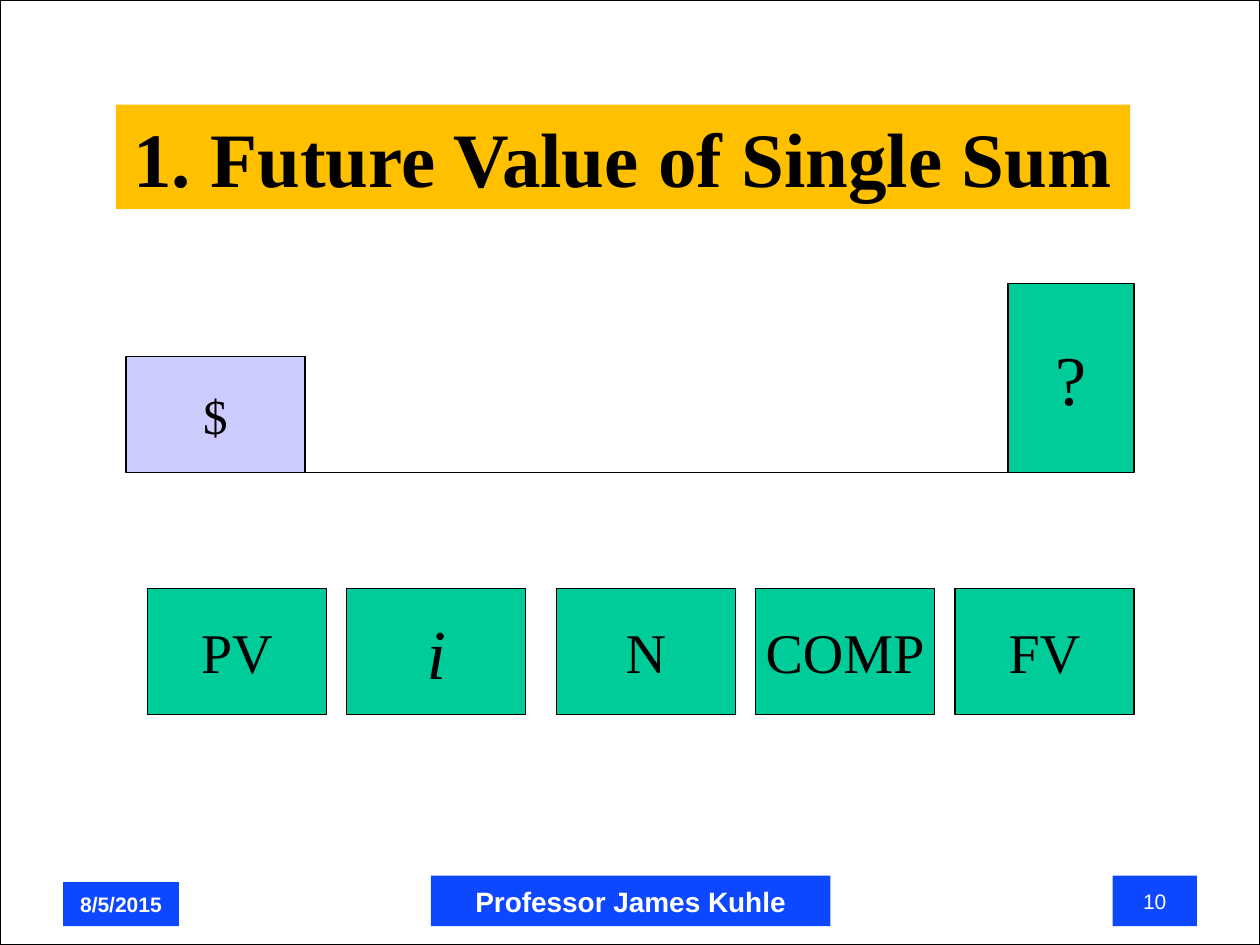
from pptx import Presentation
from pptx.dml.color import RGBColor
from pptx.enum.shapes import MSO_CONNECTOR, MSO_SHAPE
from pptx.enum.text import MSO_ANCHOR, PP_ALIGN
from pptx.oxml.ns import qn
from pptx.util import Inches, Pt
from lxml import etree

SERIF, SANS = "Times New Roman", "Arial"
BLACK, WHITE = "000000", "FFFFFF"
GREEN, LILAC, GOLD, BLUE = "00CC99", "CCCCFF", "FFC000", "0D47FF"


def rgb(value):
    return RGBColor.from_string(value)


def add_box(s, box, fill, line=None, kind=MSO_SHAPE.RECTANGLE):
    sp = s.shapes.add_shape(kind, *[Inches(v) for v in box])
    sp.shadow.inherit = False
    sp.fill.solid()
    sp.fill.fore_color.rgb = rgb(fill)
    if line:
        sp.line.color.rgb = rgb(line)
        sp.line.width = Pt(0.75)
    else:
        sp.line.fill.background()
    return sp


def set_text(sp, text, size=32, font=SERIF, color=BLACK, bold=False,
             italic=False, wrap=False, anchor=MSO_ANCHOR.MIDDLE):
    tf = sp.text_frame
    tf.word_wrap = wrap
    tf.vertical_anchor = anchor
    p = tf.paragraphs[0]
    p.alignment = PP_ALIGN.CENTER
    r = p.add_run()
    r.text = text
    r.font.name = font
    r.font.size = Pt(size)
    r.font.bold = bold
    r.font.italic = italic
    r.font.color.rgb = rgb(color)


def add_title(s, box):
    sp = add_box(s, box, GOLD)
    set_text(sp, "1. Future Value of Single Sum", size=44, bold=True,
             anchor=MSO_ANCHOR.TOP)


def add_timeline(s, box):
    left, top, width, height = box
    base = top + height
    process = MSO_SHAPE.FLOWCHART_PROCESS

    # Present amount
    present = add_box(s, (left, base - 0.92, 1.42, 0.92), LILAC, BLACK, process)
    set_text(present, "$", size=28)

    # Base line
    line = s.shapes.add_connector(
        MSO_CONNECTOR.STRAIGHT, Inches(left), Inches(base),
        Inches(left + width - 0.92), Inches(base))
    line.line.color.rgb = rgb(BLACK)
    line.line.width = Pt(1)
    etree.SubElement(line._element.spPr, qn("a:effectLst"))

    # Unknown future amount
    future = add_box(s, (left + width - 1, top, 1, height), GREEN, BLACK, process)
    set_text(future, "?", size=40)


def add_keys(s, box):
    left, top, width, height = box
    key_width = 1.42
    pitch = (width - key_width) / 4
    # The middle key sits slightly right of the even grid
    keys = [("PV", 0), ("i", -0.02), ("N", 0.04), ("COMP", 0.02), ("FV", 0)]
    for i, (name, shift) in enumerate(keys):
        key = add_box(s, (left + i * pitch + shift, top, key_width, height),
                      GREEN, BLACK)
        is_rate = name == "i"
        set_text(key, name, size=40 if is_rate else 32, italic=is_rate)


def add_footer(s, box):
    left, top, width, height = box
    date = add_box(s, (left, top + 0.05, 0.92, height - 0.05), BLUE)
    author = add_box(s, (left + 2.92, top, 3.17, height), BLUE)
    number = add_box(s, (left + width - 0.67, top, 0.67, height), BLUE)
    for sp, text, size, bold in [(date, "8/5/2015", 12, True),
                                 (author, "Professor James Kuhle", 16, True),
                                 (number, "10", 12, False)]:
        set_text(sp, text, size=size, font=SANS, color=WHITE, bold=bold, wrap=True)


def main():
    prs = Presentation()
    prs.slide_width, prs.slide_height = Inches(10), Inches(7.5)
    s = prs.slides.add_slide(prs.slide_layouts[6])
    add_box(s, (0, 0, 10, 7.5), WHITE, BLACK)  # page frame
    add_title(s, (0.92, 0.83, 8.05, 0.83))
    add_timeline(s, (1, 2.25, 8, 1.5))
    add_keys(s, (1.17, 4.67, 7.83, 1))
    add_footer(s, (0.5, 6.95, 9, 0.4))
    prs.save("out.pptx")


if __name__ == "__main__":
    main()
